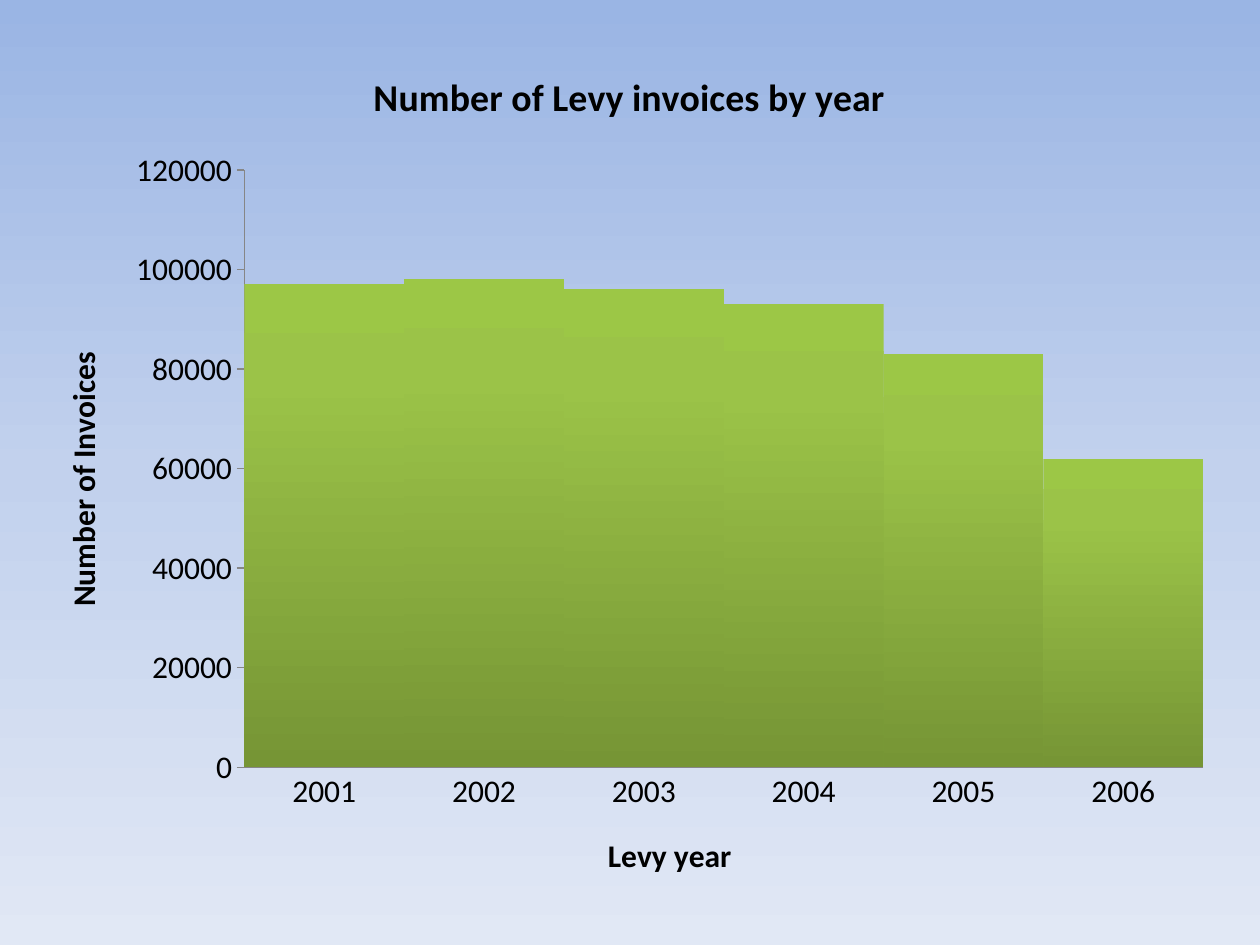
from dataclasses import dataclass

from lxml import etree
from pptx import Presentation
from pptx.chart.data import CategoryChartData
from pptx.dml.color import RGBColor
from pptx.enum import chart as chart_enum
from pptx.oxml import ns
from pptx.util import Inches, Pt

FONT = "Calibri"
TEXT = "000000"
AXIS_LINE = "868686"
CHART_WIDTH, CHART_HEIGHT = 9.48, 6.88
INVOICES = {
    "2001": 97000,
    "2002": 98000,
    "2003": 96000,
    "2004": 93000,
    "2005": 83000,
    "2006": 62000,
}


@dataclass
class Stop:
    percent: int
    color: str


@dataclass
class TitleText:
    text: str
    size: float
    left: float  # inches from the chart's corner
    top: float


BACKGROUND = [Stop(0, "9AB5E4"), Stop(50, "C2D1ED"), Stop(100, "E1E8F5")]
COLUMNS = [Stop(0, "9CC746"), Stop(20, "9BC348"), Stop(100, "769535")]


def rgb(color: str) -> RGBColor:
    return RGBColor.from_string(color)


def style_font(font, size: float, bold: bool = False) -> None:
    font.name = FONT
    font.size = Pt(size)
    font.bold = bold
    font.color.rgb = rgb(TEXT)


def fill_downwards(fill, parent, stops: list[Stop]) -> None:
    """Give a fill, found below parent, a top-to-bottom gradient."""
    fill.gradient()
    fill.gradient_angle = 270
    stop_list = parent.find(".//" + ns.qn("a:gsLst"))
    for old_stop in list(stop_list):
        stop_list.remove(old_stop)
    for stop in stops:
        element = etree.SubElement(stop_list, ns.qn("a:gs"), pos=str(stop.percent * 1000))
        etree.SubElement(element, ns.qn("a:srgbClr"), val=stop.color)


def set_layout(element, index: int, **values: object) -> None:
    """Place a chart part; lengths are inches within the chart."""
    for old_layout in element.findall(ns.qn("c:layout")):
        element.remove(old_layout)
    layout = etree.Element(ns.qn("c:layout"))
    manual = etree.SubElement(layout, ns.qn("c:manualLayout"))
    extents = {"x": CHART_WIDTH, "w": CHART_WIDTH, "y": CHART_HEIGHT, "h": CHART_HEIGHT}
    for name, value in values.items():
        if name in extents:
            value = value / extents[name]
        etree.SubElement(manual, ns.qn(f"c:{name}"), val=str(value))
    element.insert(index, layout)


def write_title(title, content: TitleText) -> None:
    title.text_frame.text = content.text
    style_font(title.text_frame.paragraphs[0].font, content.size, bold=True)
    set_layout(title.element if hasattr(title, "element") else title._element, 1,
               xMode="edge", yMode="edge", x=content.left, y=content.top)


def style_axis(axis, tick) -> None:
    axis.has_major_gridlines = False
    axis.major_tick_mark = tick
    axis.minor_tick_mark = chart_enum.XL_TICK_MARK.NONE
    axis.format.line.color.rgb = rgb(AXIS_LINE)
    axis.format.line.width = Pt(0.75)
    style_font(axis.tick_labels.font, 18)


def add_invoice_chart(slide) -> None:
    data = CategoryChartData(number_format="General")
    data.categories = list(INVOICES)
    data.add_series("Series 1", list(INVOICES.values()))
    chart = slide.shapes.add_chart(
        chart_enum.XL_CHART_TYPE.COLUMN_CLUSTERED, Inches(0.26), Inches(0.31),
        Inches(CHART_WIDTH), Inches(CHART_HEIGHT), data).chart
    chart.has_legend = False
    style_font(chart.font, 18)

    # Touching columns
    plot = chart.plots[0]
    plot.gap_width = 0
    plot.vary_by_categories = False
    fill_downwards(plot.series[0].format.fill,
                   chart.element.find(".//" + ns.qn("c:ser")), COLUMNS)
    set_layout(chart.element.find(".//" + ns.qn("c:plotArea")), 0,
               layoutTarget="inner", xMode="edge", yMode="edge",
               x=1.68, y=1.04, w=7.61, h=4.74)

    # Axes
    years, counts = chart.category_axis, chart.value_axis
    style_axis(years, chart_enum.XL_TICK_MARK.NONE)
    style_axis(counts, chart_enum.XL_TICK_MARK.OUTSIDE)
    counts.minimum_scale = 0
    counts.maximum_scale = 120000
    counts.major_unit = 20000

    # Titles
    chart.has_title = True
    write_title(chart.chart_title,
                TitleText("Number of Levy invoices by year", 21.6, 2.65, 0.19))
    write_title(years.axis_title, TitleText("Levy year", 18, 4.52, 6.26))
    write_title(counts.axis_title, TitleText("Number of Invoices", 18, 0.18, 2.44))


def main() -> None:
    presentation = Presentation()
    presentation.slide_width = Inches(10)
    presentation.slide_height = Inches(7.5)
    slide = presentation.slides.add_slide(presentation.slide_layouts[6])
    fill_downwards(slide.background.fill, slide.element, BACKGROUND)
    add_invoice_chart(slide)
    presentation.save("out.pptx")


if __name__ == "__main__":
    main()
